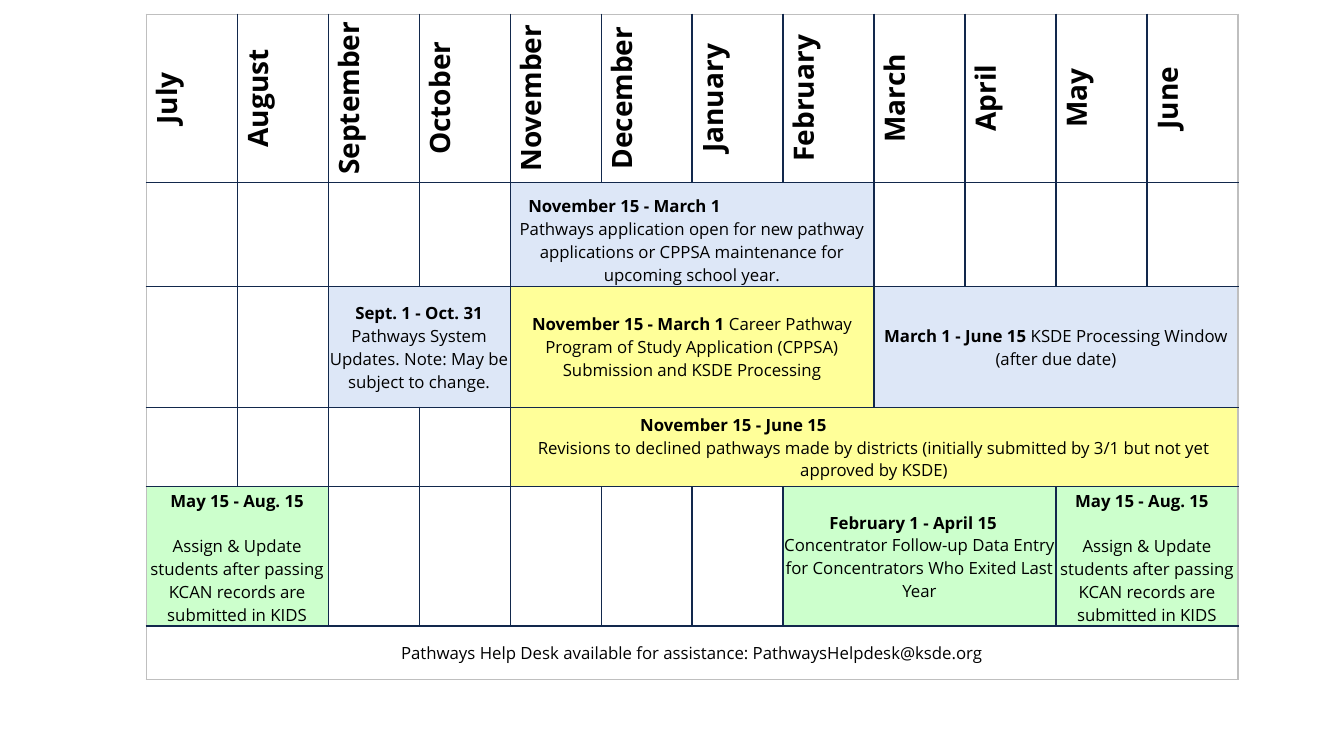
from lxml import etree
from pptx import Presentation
from pptx import util as u
from pptx.dml.color import RGBColor
from pptx.enum import text
from pptx.oxml import ns

COLORS = {
    "navy": "12284C", "edge": "BFBFBF", "black": "000000", "white": "FFFFFF",
    "blue": "DDE7F7", "yellow": "FFFF99", "green": "CCFFCC",
}
FONT = "Open Sans"
MONTHS = ["July", "August", "September", "October", "November", "December",
          "January", "February", "March", "April", "May", "June"]
ROW_HEIGHTS = [1.67, 1.03, 1.2, 0.79, 1.38, 0.53]
STUDENT_UPDATE = "Assign & Update students after passing KCAN records are submitted in KIDS"
BOTTOM = text.MSO_ANCHOR.BOTTOM
MIDDLE = text.MSO_ANCHOR.MIDDLE


def color(name):
    return RGBColor.from_string(COLORS[name])


def set_font(font, size, bold):
    font.name = FONT
    font.size = u.Pt(size)
    font.bold = bold
    font.color.rgb = color("black")


def add_border(cell, side, name):
    properties = cell._tc.get_or_add_tcPr()
    line = etree.SubElement(properties, ns.qn("a:ln" + side), w=str(u.Pt(1)))
    fill = etree.SubElement(line, ns.qn("a:solidFill"))
    etree.SubElement(fill, ns.qn("a:srgbClr"), val=COLORS[name])


def style_cell(cell, row, column):
    last_row = row + cell.span_height == len(ROW_HEIGHTS)
    last_column = column + cell.span_width == len(MONTHS)
    outer = {"L": column == 0, "R": last_column, "T": row == 0, "B": last_row}
    for side, is_outer in outer.items():
        add_border(cell, side, "edge" if is_outer else "navy")
    cell.fill.solid()
    cell.fill.fore_color.rgb = color("white")
    cell.margin_left = cell.margin_right = cell.margin_top = u.Inches(0.01)
    cell.margin_bottom = 0


def write(paragraph, wording, size=12, bold=False, indent=None):
    paragraph.text = wording
    paragraph.alignment = text.PP_ALIGN.CENTER
    if indent is not None:
        paragraph.alignment = text.PP_ALIGN.LEFT
        paragraph._p.get_or_add_pPr().set("marL", str(u.Inches(indent)))
    set_font(paragraph.font, size, bold)


def add_month(cell, month):
    cell.vertical_anchor = BOTTOM
    cell._tc.get_or_add_tcPr().set("vert", "vert270")
    write(cell.text_frame.paragraphs[0], month, 20, True)


def add_inline_period(cell, fill, dates, body):
    cell.fill.fore_color.rgb = color(fill)
    cell.vertical_anchor = MIDDLE
    paragraph = cell.text_frame.paragraphs[0]
    paragraph.alignment = text.PP_ALIGN.CENTER
    for wording, bold in ((dates + " ", True), (body, False)):
        run = paragraph.add_run()
        run.text = wording
        set_font(run.font, 12, bold)


def add_stacked_period(cell, fill, dates, body, anchor, indent=None, gap=0):
    cell.fill.fore_color.rgb = color(fill)
    cell.vertical_anchor = anchor
    write(cell.text_frame.paragraphs[0], dates, bold=True, indent=indent)
    description = cell.text_frame.add_paragraph()
    write(description, body)
    description.space_before = u.Pt(gap)


def add_calendar(slide, spans):
    frame = slide.shapes.add_table(
        len(ROW_HEIGHTS), len(MONTHS), u.Inches(1.45), u.Inches(0.14),
        u.Inches(10.83), u.Inches(sum(ROW_HEIGHTS)))
    table = frame.table
    table.first_row = table.horz_banding = False
    for row, height in zip(table.rows, ROW_HEIGHTS):
        row.height = u.Inches(height)
    for row, column, width in spans:
        table.cell(row, column).merge(table.cell(row, column + width - 1))
    for row in range(len(ROW_HEIGHTS)):
        for column in range(len(MONTHS)):
            style_cell(table.cell(row, column), row, column)
    return table


def main():
    presentation = Presentation()
    presentation.slide_width = u.Inches(13.33)
    presentation.slide_height = u.Inches(7.5)
    slide = presentation.slides.add_slide(presentation.slide_layouts[6])

    inline_periods = [
        (2, 2, 2, "blue", "Sept. 1 - Oct. 31",
         "Pathways System Updates. Note: May be subject to change."),
        (2, 4, 4, "yellow", "November 15 - March 1",
         "Career Pathway Program of Study Application (CPPSA) "
         "Submission and KSDE Processing"),
        (2, 8, 4, "blue", "March 1 - June 15",
         "KSDE Processing Window (after due date)"),
    ]
    stacked_periods = [
        (1, 4, 4, "blue", "November 15 - March 1",
         "Pathways application open for new pathway applications "
         "or CPPSA maintenance for upcoming school year.", BOTTOM, 0.17),
        (3, 4, 8, "yellow", "November 15 - June 15",
         "Revisions to declined pathways made by districts (initially "
         "submitted by 3/1 but not yet approved by KSDE)", MIDDLE, 1.28),
        (4, 0, 2, "green", "May 15 - Aug. 15", STUDENT_UPDATE, BOTTOM, None, 16),
        (4, 7, 3, "green", "February 1 - April 15",
         "Concentrator Follow-up Data Entry for Concentrators "
         "Who Exited Last Year", MIDDLE, 0.45),
        (4, 10, 2, "green", "May 15 - Aug. 15", STUDENT_UPDATE, BOTTOM, 0.18, 16),
    ]
    help_row = len(ROW_HEIGHTS) - 1
    spans = [period[:3] for period in inline_periods + stacked_periods]
    table = add_calendar(slide, spans + [(help_row, 0, len(MONTHS))])

    for column, month in enumerate(MONTHS):
        add_month(table.cell(0, column), month)
    for row, column, _, *content in inline_periods:
        add_inline_period(table.cell(row, column), *content)
    for row, column, _, *content in stacked_periods:
        add_stacked_period(table.cell(row, column), *content)

    help_desk = table.cell(help_row, 0)
    help_desk.vertical_anchor = MIDDLE
    write(help_desk.text_frame.paragraphs[0],
          "Pathways Help Desk available for assistance: PathwaysHelpdesk@ksde.org")
    presentation.save("out.pptx")


if __name__ == "__main__":
    main()
